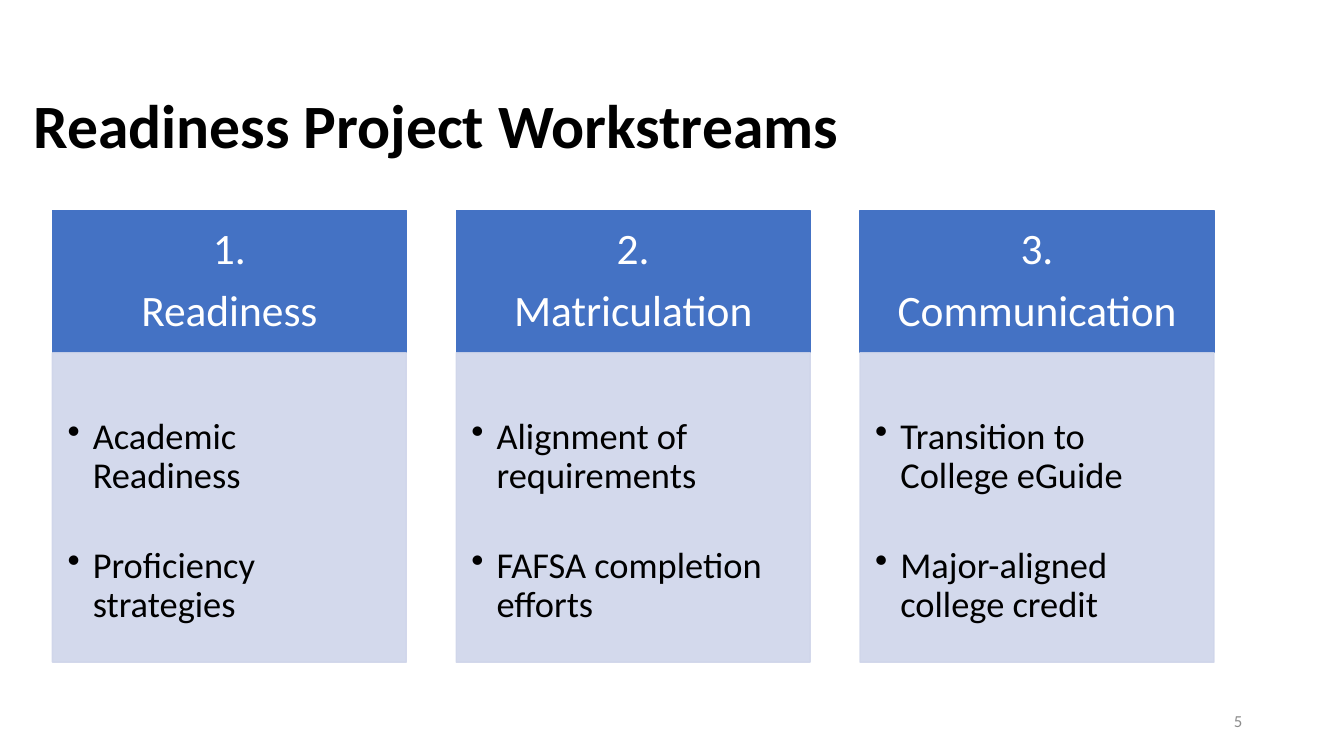
import pptx
import pptx.util
import pptx.dml.color
import pptx.enum.shapes
import pptx.enum.text
import pptx.oxml
import pptx.oxml.ns

Inches = pptx.util.Inches
Pt = pptx.util.Pt
RGBColor = pptx.dml.color.RGBColor
ALIGN = pptx.enum.text.PP_ALIGN
ANCHOR = pptx.enum.text.MSO_ANCHOR

FONT = "Calibri"
BLUE = RGBColor(0x44, 0x72, 0xC4)
PALE_BLUE = RGBColor(0xCF, 0xD5, 0xEA)
BLACK = RGBColor(0, 0, 0)
WHITE = RGBColor(0xFF, 0xFF, 0xFF)
GRAY = RGBColor(0x8C, 0x8C, 0x8C)

WORKSTREAMS = [
    ("1.", "Readiness", ["Academic Readiness", "Proficiency strategies"]),
    ("2.", "Matriculation", ["Alignment of requirements", "FAFSA completion efforts"]),
    ("3.", "Communication", ["Transition to College eGuide", "Major-aligned college credit"]),
]
COLUMN_WIDTH = 3.51
COLUMN_PITCH = 4.005
HEADER_HEIGHT = 1.41


def set_frame(frame, insets, anchor):
    """Wrap the text and set its left, top, right and bottom insets in inches."""
    frame.word_wrap = True
    frame.vertical_anchor = anchor
    (frame.margin_left, frame.margin_top,
     frame.margin_right, frame.margin_bottom) = map(Inches, insets)


def write_paragraphs(frame, lines, size, color, align, bold=False, spacing=0.9):
    for index, line in enumerate(lines):
        paragraph = frame.add_paragraph() if index else frame.paragraphs[0]
        paragraph.alignment = align
        paragraph.line_spacing = spacing
        run = paragraph.add_run()
        run.text = line
        run.font.name = FONT
        run.font.size = Pt(size)
        run.font.bold = bold
        run.font.color.rgb = color


def add_label(slide, box, text, size, color, align, insets, bold=False, spacing=0.9):
    label = slide.shapes.add_textbox(*map(Inches, box))
    set_frame(label.text_frame, insets, ANCHOR.MIDDLE)
    write_paragraphs(label.text_frame, [text], size, color, align, bold, spacing)


def add_panel(slide, box, color):
    panel = slide.shapes.add_shape(
        pptx.enum.shapes.MSO_SHAPE.RECTANGLE, *map(Inches, box))
    panel.shadow.inherit = False
    panel.fill.solid()
    panel.fill.fore_color.rgb = color
    panel.line.color.rgb = color
    panel.line.width = Pt(1)
    return panel


def make_translucent(panel, percent):
    for color in panel.fill._xPr.iter(pptx.oxml.ns.qn("a:srgbClr")):
        alpha = pptx.oxml.parse_xml(
            f'<a:alpha {pptx.oxml.ns.nsdecls("a")} val="{percent * 1000}"/>')
        color.append(alpha)


def add_bullet(paragraph, indent):
    properties = paragraph._p.get_or_add_pPr()
    properties.set("marL", str(Inches(indent)))
    properties.set("indent", str(-Inches(indent)))
    properties.append(pptx.oxml.parse_xml(
        f'<a:buChar {pptx.oxml.ns.nsdecls("a")} char="•"/>'))


def add_workstream(slide, box, number, title, efforts):
    left, top, width, height = box
    header = add_panel(slide, (left, top, width, HEADER_HEIGHT), BLUE)
    set_frame(header.text_frame, (0.24, 0.14, 0.24, 0.14), ANCHOR.MIDDLE)
    write_paragraphs(header.text_frame, [number, title], 31, WHITE, ALIGN.CENTER)
    for paragraph in header.text_frame.paragraphs:
        paragraph.space_after = Pt(11)

    body = add_panel(
        slide, (left, top + HEADER_HEIGHT, width, height - HEADER_HEIGHT), PALE_BLUE)
    make_translucent(body, 90)
    set_frame(body.text_frame, (0.15, 0.65, 0.2, 0.23), ANCHOR.TOP)
    write_paragraphs(body.text_frame, efforts, 26, BLACK, ALIGN.LEFT)
    for paragraph in body.text_frame.paragraphs:
        paragraph.space_after = Pt(36)
        add_bullet(paragraph, 0.25)


def main():
    presentation = pptx.Presentation()
    presentation.slide_width = Inches(13.33)
    presentation.slide_height = Inches(7.5)
    slide = presentation.slides.add_slide(presentation.slide_layouts[6])

    add_label(slide, (0, 0.85, 12.55, 0.86), "Readiness Project Workstreams",
              44, BLACK, ALIGN.LEFT, (0.33, 0.05, 0.1, 0.05), bold=True)
    for index, workstream in enumerate(WORKSTREAMS):
        box = (0.52 + index * COLUMN_PITCH, 2.09, COLUMN_WIDTH, 4.48)
        add_workstream(slide, box, *workstream)
    add_label(slide, (9.42, 6.95, 3, 0.4), "5", 12, GRAY, ALIGN.RIGHT,
              (0.1, 0.05, 0.1, 0.05), spacing=1.0)
    presentation.save("out.pptx")


if __name__ == "__main__":
    main()
